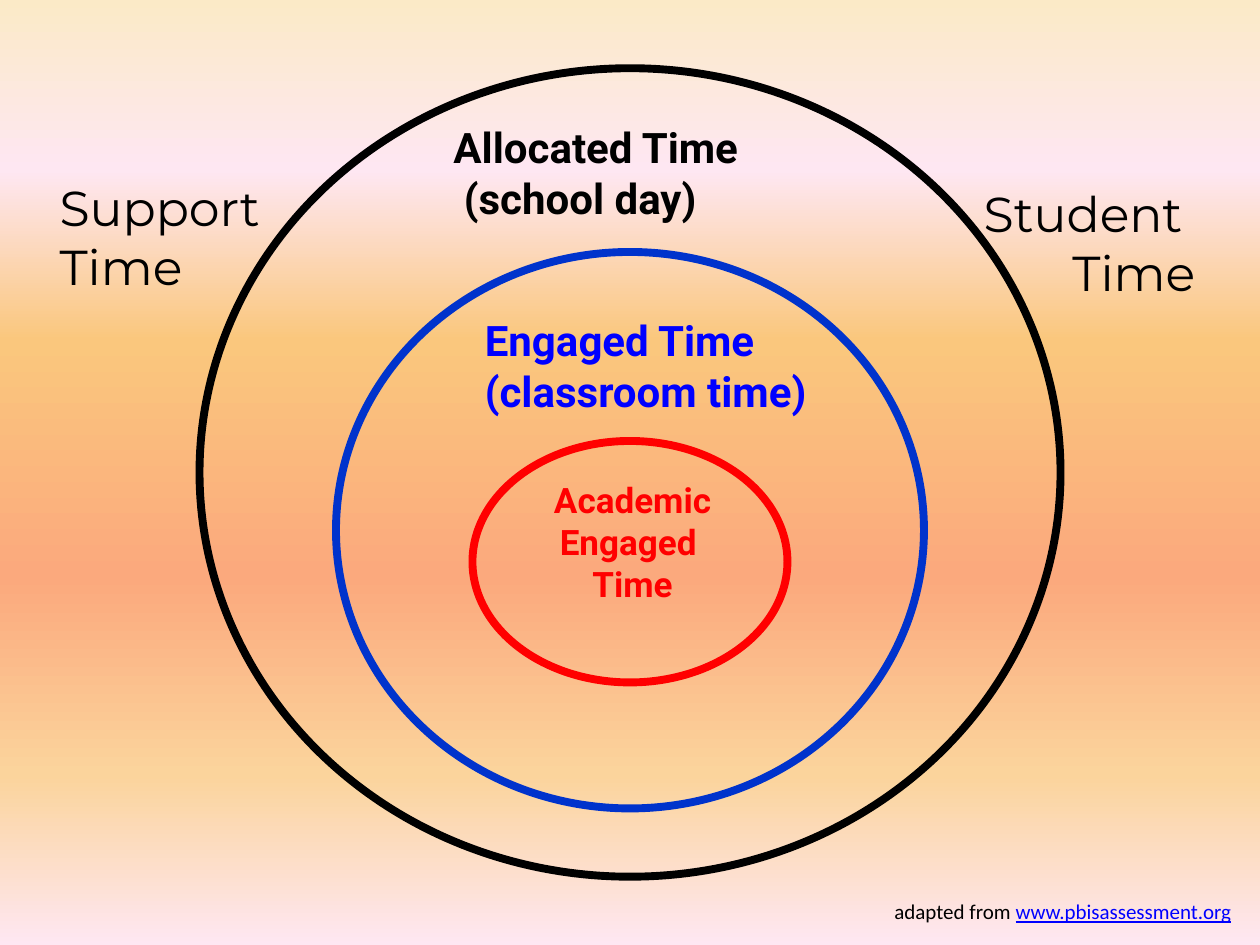
from lxml.etree import SubElement
from pptx import Presentation
from pptx.dml.color import RGBColor as RGB
from pptx.enum.shapes import MSO_SHAPE as Shape
from pptx.enum.text import MSO_AUTO_SIZE as AutoSize, PP_ALIGN as Align
from pptx.oxml.ns import qn
from pptx.util import Inches, Pt

COLORS = {"black": "000000", "red": "FF0000", "blue": "0000FF", "ring_blue": "0033CC"}
SUNSET = [(0, "FBEAC7"), (18, "FEE7F2"), (36, "FAC77D"),
          (61, "FBA97D"), (82, "FBD49C"), (100, "FEE7F2")]
COLUMNS, ROWS = 120, 90  # grid cells of 1/12 inch


class Board:
    """Holds the style and the current slide; lengths are grid columns and rows."""

    ring_width = Pt(4.5)

    def __init__(self, prs):
        self.slide = prs.slides.add_slide(prs.slide_layouts[6])
        self.column = prs.slide_width / COLUMNS
        self.row = prs.slide_height / ROWS

    def place(self, left, top, width, height):
        return (round(left * self.column), round(top * self.row),
                round(width * self.column), round(height * self.row))

    def backdrop(self, stops):
        """Fill the background with a gradient from top to bottom."""
        fill = self.slide.background.fill
        fill.gradient()
        fill.gradient_angle = 270
        stop_list = next(self.slide.background._cSld.iter(qn("a:gsLst")))
        for old_stop in list(stop_list):
            stop_list.remove(old_stop)
        for percent, color in stops:
            stop = SubElement(stop_list, qn("a:gs"), pos=str(percent * 1000))
            SubElement(stop, qn("a:srgbClr"), val=color)

    def ring(self, top, width, height, color):
        """Draw an unfilled ellipse centred across the slide."""
        ellipse = self.slide.shapes.add_shape(
            Shape.OVAL, *self.place((COLUMNS - width) / 2, top, width, height))
        ellipse.shadow.inherit = False
        ellipse.fill.background()
        ellipse.line.color.rgb = RGB.from_string(COLORS[color])
        ellipse.line.width = self.ring_width

    def text(self, lines, area, *, font="Roboto", size=24, color="black",
             bold=False, align=Align.LEFT, wrap=True):
        """Add a text box; each line is a list of (words, colour, underline) or a string."""
        frame = self.slide.shapes.add_textbox(*self.place(*area)).text_frame
        frame.word_wrap = wrap
        frame.auto_size = AutoSize.SHAPE_TO_FIT_TEXT
        for number, line in enumerate(lines):
            paragraph = frame.add_paragraph() if number else frame.paragraphs[0]
            paragraph.alignment = align
            parts = [(line, color, False)] if isinstance(line, str) else line
            for words, part_color, underline in parts:
                run = paragraph.add_run()
                run.text = words
                run.font.name = font
                run.font.size = Pt(size)
                run.font.bold = bold
                run.font.underline = underline
                run.font.color.rgb = RGB.from_string(COLORS[part_color])


def main():
    prs = Presentation()
    prs.slide_width, prs.slide_height = Inches(10), Inches(7.5)
    board = Board(prs)
    board.backdrop(SUNSET)

    board.ring(42, 30, 23, "red")
    board.text(["Academic", "Engaged ", "Time"], (50.75, 45, 19, 13.3),
               size=20, color="red", bold=True, align=Align.CENTER)
    board.ring(24, 56, 53, "ring_blue")
    board.text(["Engaged Time", "(classroom time)"], (45, 29.4, 37, 10.9),
               color="blue", bold=True)
    board.ring(6.5, 82, 77, "black")
    board.text(["Allocated Time", " (school day)"], (42, 11, 36, 10.9), bold=True)

    board.text(["Support", "Time"], (4.5, 16.3, 29, 12.5), font="Montserrat", size=28)
    board.text(["Student ", "Time"], (82, 16.9, 33, 12.5),
               font="Montserrat", size=28, align=Align.RIGHT)
    board.text([[("adapted from ", "black", False),
                 ("www.pbisassessment.org", "blue", True)]],
               (84, 85, 34.9, 3.6), font="Calibri", size=12, wrap=False)

    prs.save("out.pptx")


if __name__ == "__main__":
    main()
